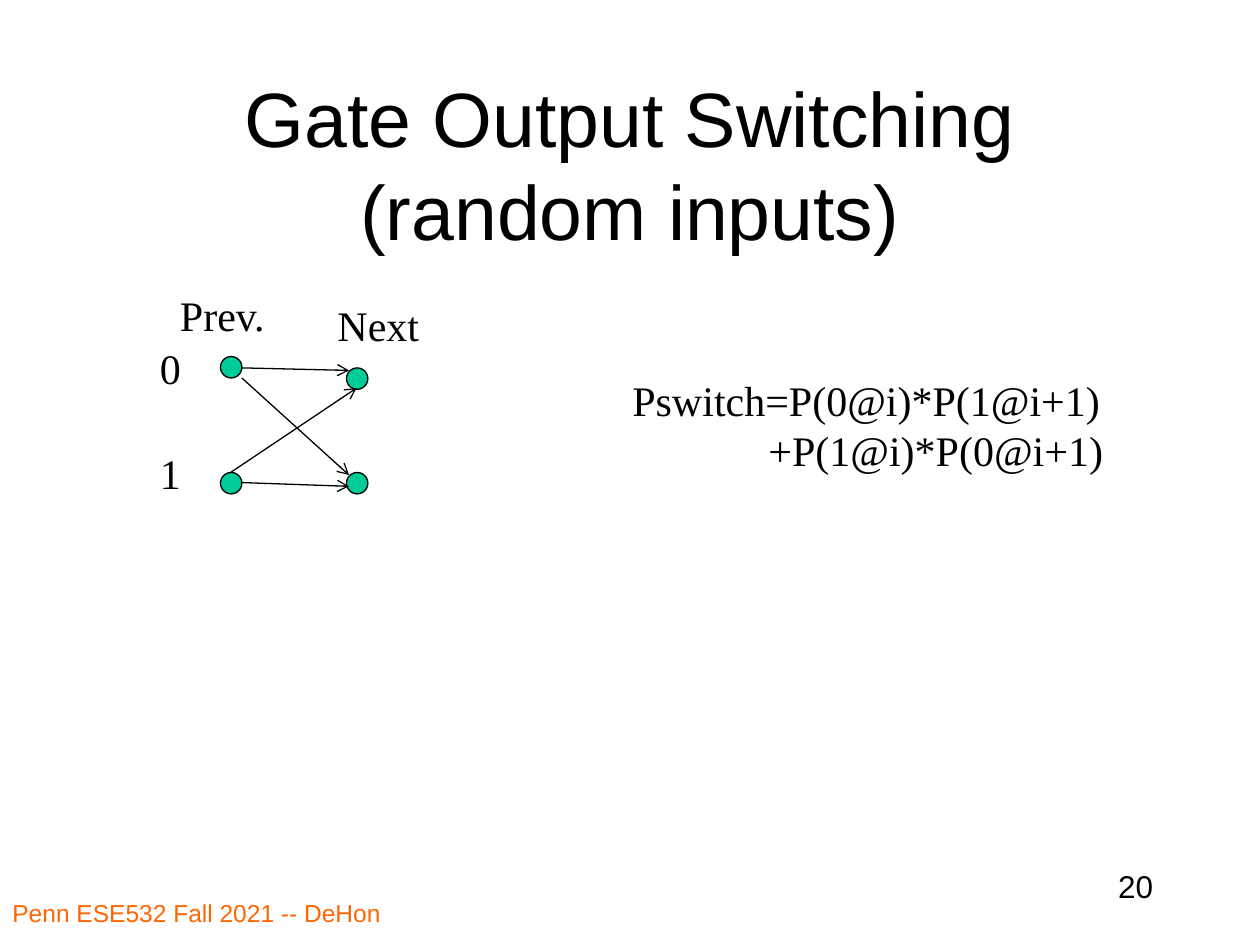
from lxml import etree
from pptx import Presentation
from pptx.dml.color import RGBColor
from pptx.enum.shapes import MSO_CONNECTOR, MSO_SHAPE
from pptx.enum.text import MSO_ANCHOR, MSO_AUTO_SIZE, PP_ALIGN
from pptx.oxml.ns import qn
from pptx.util import Inches, Pt

LEFT, CENTER, RIGHT = PP_ALIGN.LEFT, PP_ALIGN.CENTER, PP_ALIGN.RIGHT
MIDDLE = MSO_ANCHOR.MIDDLE
NO_FIT = MSO_AUTO_SIZE.NONE
OVAL, STRAIGHT = MSO_SHAPE.OVAL, MSO_CONNECTOR.STRAIGHT
COLORS = {"text": "000000", "footer": "FF6600", "node": "00CC99", "line": "000000"}
SANS, SERIF = "Arial", "Times New Roman"
NODE = 0.17


def rgb(name):
    """Return the named colour."""
    return RGBColor.from_string(COLORS[name])


def format_paragraph(p, size, font, color="text", align=LEFT):
    """Set the font and alignment of one paragraph."""
    p.alignment = align
    p.font.size = Pt(size)
    p.font.name = font
    p.font.color.rgb = rgb(color)


def add_text(s, box, text, size, font, color="text", align=LEFT, wrap=False):
    """Add a text box and return its text frame."""
    tf = s.shapes.add_textbox(*map(Inches, box)).text_frame
    tf.word_wrap = wrap
    tf.text = text
    for p in tf.paragraphs:
        format_paragraph(p, size, font, color, align)
    return tf


def add_title(s, box, text):
    """Place and format the title placeholder."""
    sp = s.shapes.title
    sp.left, sp.top, sp.width, sp.height = map(Inches, box)
    tf = sp.text_frame
    tf.text = text
    tf.auto_size = NO_FIT
    tf.vertical_anchor = MIDDLE
    format_paragraph(tf.paragraphs[0], 44, SANS, align=CENTER)


def add_node(s, x, y):
    """Add one state circle."""
    sp = s.shapes.add_shape(OVAL, Inches(x), Inches(y), Inches(NODE), Inches(NODE))
    sp.shadow.inherit = False
    sp.fill.solid()
    sp.fill.fore_color.rgb = rgb("node")
    sp.line.color.rgb = rgb("line")
    sp.line.width = Pt(0.75)


def add_arrow(s, x1, y1, x2, y2):
    """Add a line with an open arrowhead at its end."""
    cx = s.shapes.add_connector(STRAIGHT, *map(Inches, (x1, y1, x2, y2)))
    cx.line.color.rgb = rgb("line")
    cx.line.width = Pt(0.75)
    etree.SubElement(cx.line._get_or_add_ln(), qn("a:tailEnd"), type="arrow")
    etree.SubElement(cx._element.spPr, qn("a:effectLst"))


def add_transitions(s, box):
    """Draw the previous and next states with the arrows between them."""
    x, y, w, h = box
    nodes = [(0.58, 0.58), (1.58, 0.67), (1.58, 1.5), (0.58, 1.5)]
    for dx, dy in nodes:
        add_node(s, x + dx, y + dy)
    arrows = [(0.75, 0.75, 1.6, 1.52), (0.75, 0.67, 1.6, 0.69),
              (0.75, 1.58, 1.6, 1.61), (0.66, 1.5, 1.66, 0.83)]
    for x1, y1, x2, y2 in arrows:
        add_arrow(s, x + x1, y + y1, x + x2, y + y2)
    labels = [("Prev.", 0.16, 0, 0.88), ("Next", 1.41, 0.08, 0.88),
              ("0", 0, 0.42, 0.37), ("1", 0, 1.25, 0.37)]
    for text, dx, dy, width in labels:
        add_text(s, (x + dx, y + dy, width, 0.5), text, 24, SERIF)


def add_formula(s, box):
    """Add the switching probability with an indented second line."""
    tf = add_text(s, box, "Pswitch=P(0@i)*P(1@i+1)\n+P(1@i)*P(0@i+1)", 24, SERIF)
    pPr = tf.paragraphs[1]._p.get_or_add_pPr()
    pPr.set("marL", str(Inches(1.08)))
    pPr.set("indent", "0")


def add_footer(s, box, text, number):
    """Add the course line at the left and the slide number at the right."""
    x, y, w, h = box
    add_text(s, (x, y + 0.25, 4.08, 0.42), text, 14, SANS, "footer", wrap=True)
    add_text(s, (x + w - 2.08, y, 2.08, 0.5), number, 18, SANS, align=RIGHT, wrap=True)


def main():
    """Build and save the slide."""
    prs = Presentation()
    prs.slide_width, prs.slide_height = Inches(10), Inches(7.5)
    s = prs.slides.add_slide(prs.slide_layouts[5])
    add_title(s, (0.75, 0.67, 8.5, 1.25), "Gate Output Switching\v(random inputs)")
    add_footer(s, (0, 6.83, 9.25, 0.67), "Penn ESE532 Fall 2021 -- DeHon", "20")
    add_transitions(s, (1.17, 2.25, 2.29, 1.75))
    add_formula(s, (4.92, 2.92, 3.95, 0.91))
    prs.save("out.pptx")


if __name__ == "__main__":
    main()
